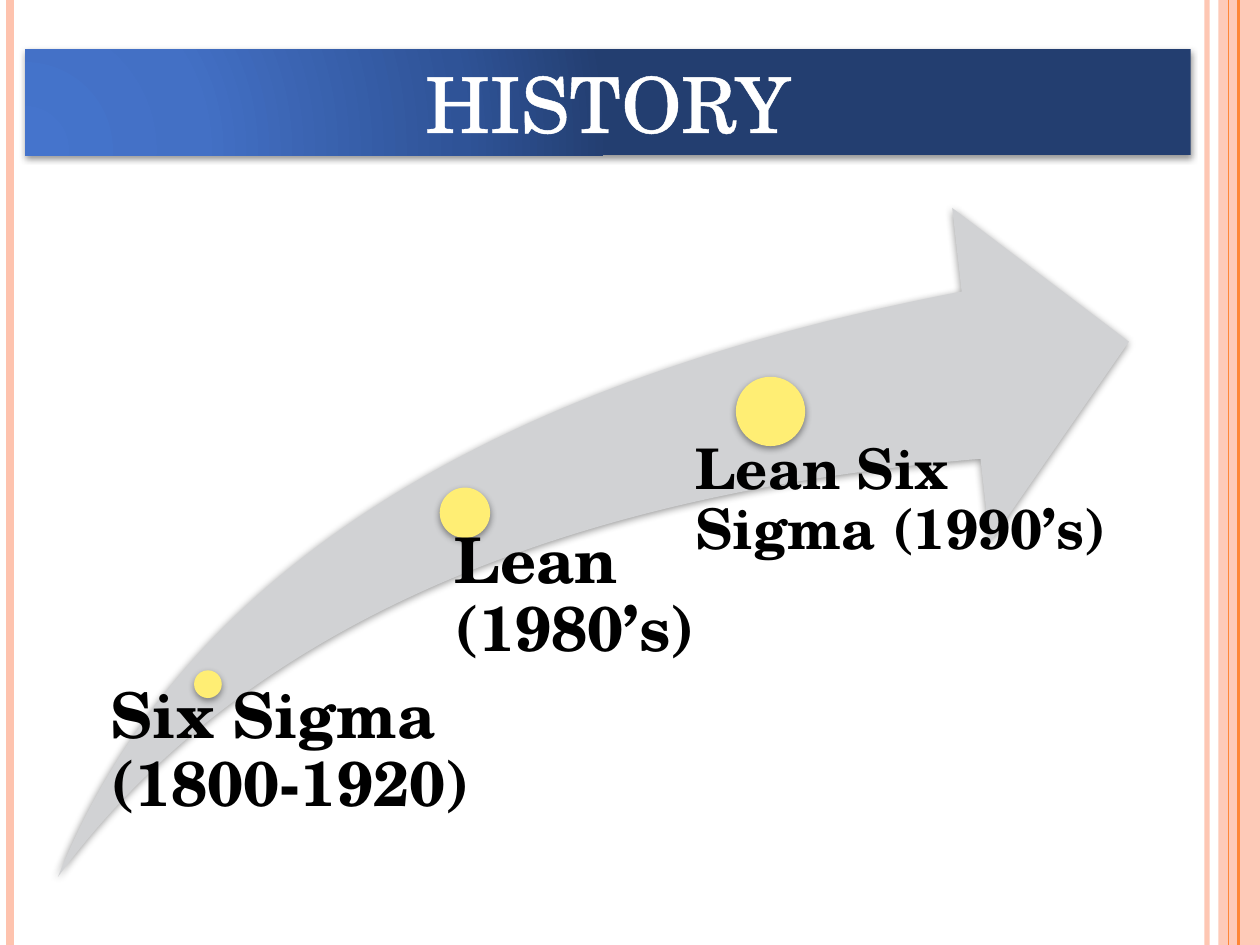
from dataclasses import dataclass

from lxml.etree import SubElement
from pptx import Presentation
from pptx.dml.color import RGBColor
from pptx.enum.shapes import MSO_CONNECTOR, MSO_SHAPE
from pptx.enum.text import MSO_ANCHOR, MSO_AUTO_SIZE, PP_ALIGN
from pptx.oxml import parse_xml
from pptx.oxml.ns import nsdecls, qn
from pptx.util import Emu, Inches, Pt

COLUMNS, ROWS = 100, 75  # square grid over the slide
PAGE_WIDTH, PAGE_HEIGHT = Inches(10), Inches(7.5)


@dataclass(frozen=True)
class Theme:
    font: str = "TeX Gyre Schola"
    rail: str = "FEC3AE"
    accent: str = "FE8637"
    arrow: str = "D1D2D4"
    dot: str = "FFEE74"
    ink: str = "000000"
    title_ink: str = "FFFFFF"
    banner: tuple = ((0, "4574CC"), (30, "4370C5"), (75, "2F5397"), (100, "233E70"))
    title_size: float = 44
    title_outline: float = 1.45
    label_size: float = 36
    small_label_size: float = 32


@dataclass(frozen=True)
class Area:
    column: float
    row: float
    columns: float
    rows: float

    def place(self) -> tuple:
        return (across(self.column), down(self.row),
                across(self.columns), down(self.rows))


@dataclass(frozen=True)
class Rail:
    column: float
    color: str
    width: float
    opacity: int = 100


@dataclass(frozen=True)
class Milestone:
    text: str
    dot: Area
    label: Area
    indent: float
    size: float


THEME = Theme()
RAILS = (
    Rail(95.8, THEME.rail, 3, 93),
    Rail(0.8, THEME.rail, 4.5),
    Rail(98.3, THEME.accent, 1.5),
    Rail(97.5, THEME.accent, 0.75),
)
SIDE_BAND = Area(96.7, 0, 3.3, ROWS)
BANNER = Area(2, 3.9, 92.5, 8.4)
ARROW = Area(4.6, 16.5, 85, 53.1)
MILESTONES = (
    Milestone("Six Sigma (1800-1920)", Area(15.4, 53.2, 2.2, 2.2),
              Area(7.6, 54.3, 37.6, 15.4), 1.2, THEME.label_size),
    Milestone("Lean (1980’s)", Area(34.9, 38.7, 4, 4),
              Area(34, 42, 24.3, 8), 2.1, THEME.label_size),
    Milestone("Lean Six Sigma (1990’s)", Area(58.4, 29.9, 5.5, 5.5),
              Area(52.3, 35, 38.1, 21.9), 2.9, THEME.small_label_size),
)


def across(columns: float) -> Emu:
    return Emu(round(PAGE_WIDTH * columns / COLUMNS))


def down(rows: float) -> Emu:
    return Emu(round(PAGE_HEIGHT * rows / ROWS))


def rgb(color: str) -> RGBColor:
    return RGBColor.from_string(color)


def set_opacity(properties, percent: int) -> None:
    for color in properties.iter(qn("a:srgbClr")):
        SubElement(color, qn("a:alpha"), val=str(percent * 1000))


def add_shadow(shape) -> None:
    shape.shadow.inherit = False
    effects = shape._element.spPr.find(qn("a:effectLst"))
    effects.append(parse_xml(
        f'<a:outerShdw {nsdecls("a")} blurRad="{Pt(4)}" dist="{Pt(1.6)}" '
        'dir="5400000" rotWithShape="0"><a:srgbClr val="000000">'
        '<a:alpha val="42000"/></a:srgbClr></a:outerShdw>'))


def add_figure(page, preset, area: Area, color: str, shadow: bool = True):
    shape = page.shapes.add_shape(preset, *area.place())
    shape.fill.solid()
    shape.fill.fore_color.rgb = rgb(color)
    shape.line.fill.background()
    if shadow:
        add_shadow(shape)
    else:
        shape.shadow.inherit = False
    return shape


def add_rail(page, rail: Rail) -> None:
    x = across(rail.column)
    line = page.shapes.add_connector(MSO_CONNECTOR.STRAIGHT, x, 0, x, PAGE_HEIGHT)
    line.line.color.rgb = rgb(rail.color)
    line.line.width = Pt(rail.width)
    properties = line._element.spPr
    if rail.opacity < 100:
        set_opacity(properties, rail.opacity)
    SubElement(properties, qn("a:effectLst"))


def write_text(box, text: str, *, size: float, color: str, bold: bool = False,
               align=PP_ALIGN.LEFT, anchor=MSO_ANCHOR.TOP, spacing: float = 1.0):
    frame = box.text_frame
    frame.word_wrap = True
    frame.vertical_anchor = anchor
    para = frame.paragraphs[0]
    para.alignment = align
    para.line_spacing = spacing
    span = para.add_run()
    span.text = text
    span.font.name = THEME.font
    span.font.size = Pt(size)
    span.font.bold = bold
    span.font.color.rgb = rgb(color)
    return span


def add_banner(page, text: str) -> None:
    title = page.shapes.title
    title.left, title.top, title.width, title.height = BANNER.place()
    stops = "".join(f'<a:gs pos="{position * 1000}"><a:srgbClr val="{color}"/></a:gs>'
                    for position, color in THEME.banner)
    title._element.spPr.append(parse_xml(
        f'<a:gradFill {nsdecls("a")} rotWithShape="1"><a:gsLst>{stops}</a:gsLst>'
        '<a:path path="circle"><a:fillToRect l="5000" t="100000" r="120000" '
        'b="10000"/></a:path></a:gradFill>'))
    title.line.fill.background()
    add_shadow(title)
    span = write_text(title, text, size=THEME.title_size, color=THEME.title_ink,
                      align=PP_ALIGN.CENTER, anchor=MSO_ANCHOR.MIDDLE)
    title.text_frame.auto_size = MSO_AUTO_SIZE.SHAPE_TO_FIT_TEXT
    span.font._element.insert(0, parse_xml(
        f'<a:ln {nsdecls("a")} w="{Pt(THEME.title_outline)}"><a:solidFill>'
        f'<a:srgbClr val="{THEME.title_ink}"/></a:solidFill></a:ln>'))


def add_milestone(page, milestone: Milestone) -> None:
    add_figure(page, MSO_SHAPE.OVAL, milestone.dot, THEME.dot)
    box = page.shapes.add_textbox(*milestone.label.place())
    frame = box.text_frame
    frame.margin_left = across(milestone.indent)
    frame.margin_top = frame.margin_right = frame.margin_bottom = 0
    write_text(box, milestone.text, size=milestone.size, color=THEME.ink,
               bold=True, spacing=0.9)


def main() -> None:
    deck = Presentation()
    deck.slide_width, deck.slide_height = PAGE_WIDTH, PAGE_HEIGHT
    page = deck.slides.add_slide(deck.slide_layouts.get_by_name("Title Only"))

    band = add_figure(page, MSO_SHAPE.RECTANGLE, SIDE_BAND, THEME.rail, shadow=False)
    set_opacity(band._element.spPr, 87)
    for rail in RAILS:
        add_rail(page, rail)

    add_banner(page, "HISTORY")
    arrow = add_figure(page, MSO_SHAPE.SWOOSH_ARROW, ARROW, THEME.arrow)
    arrow.adjustments[0] = arrow.adjustments[1] = 0.25
    for milestone in MILESTONES:
        add_milestone(page, milestone)

    deck.save("out.pptx")


if __name__ == "__main__":
    main()
